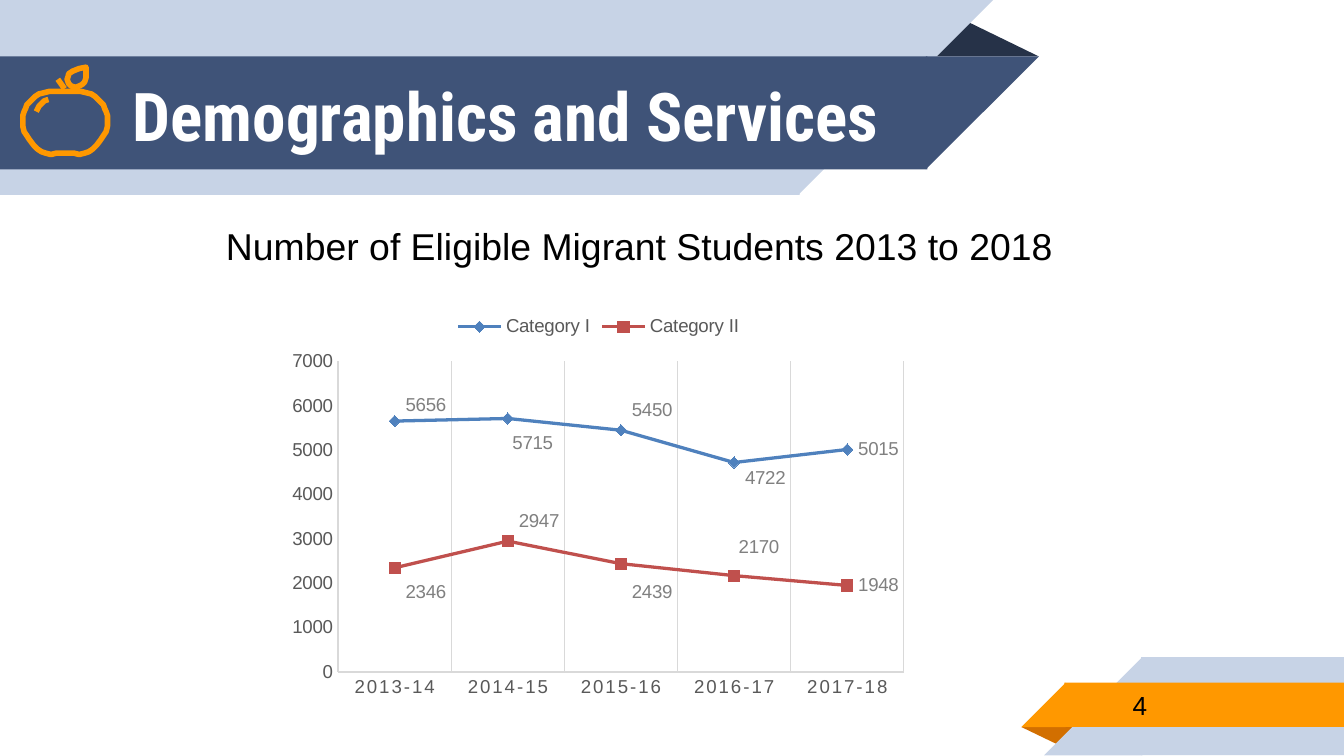
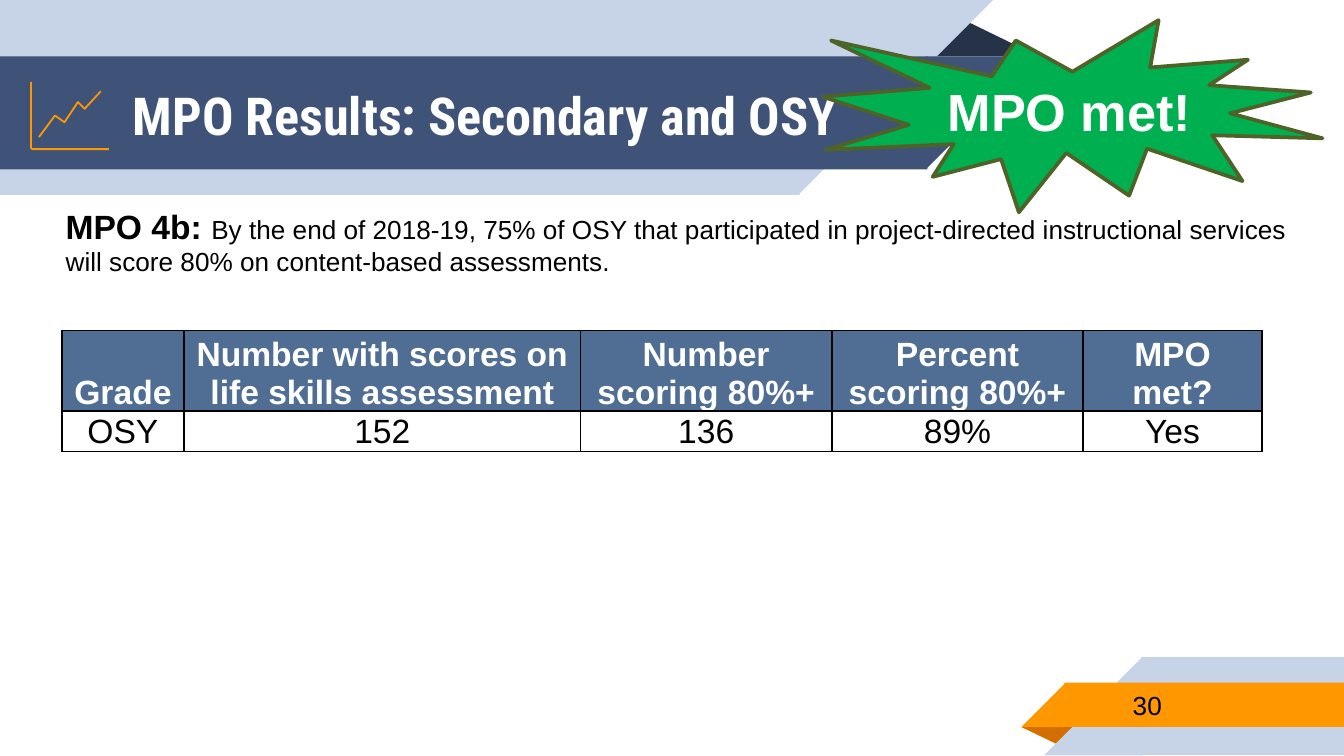
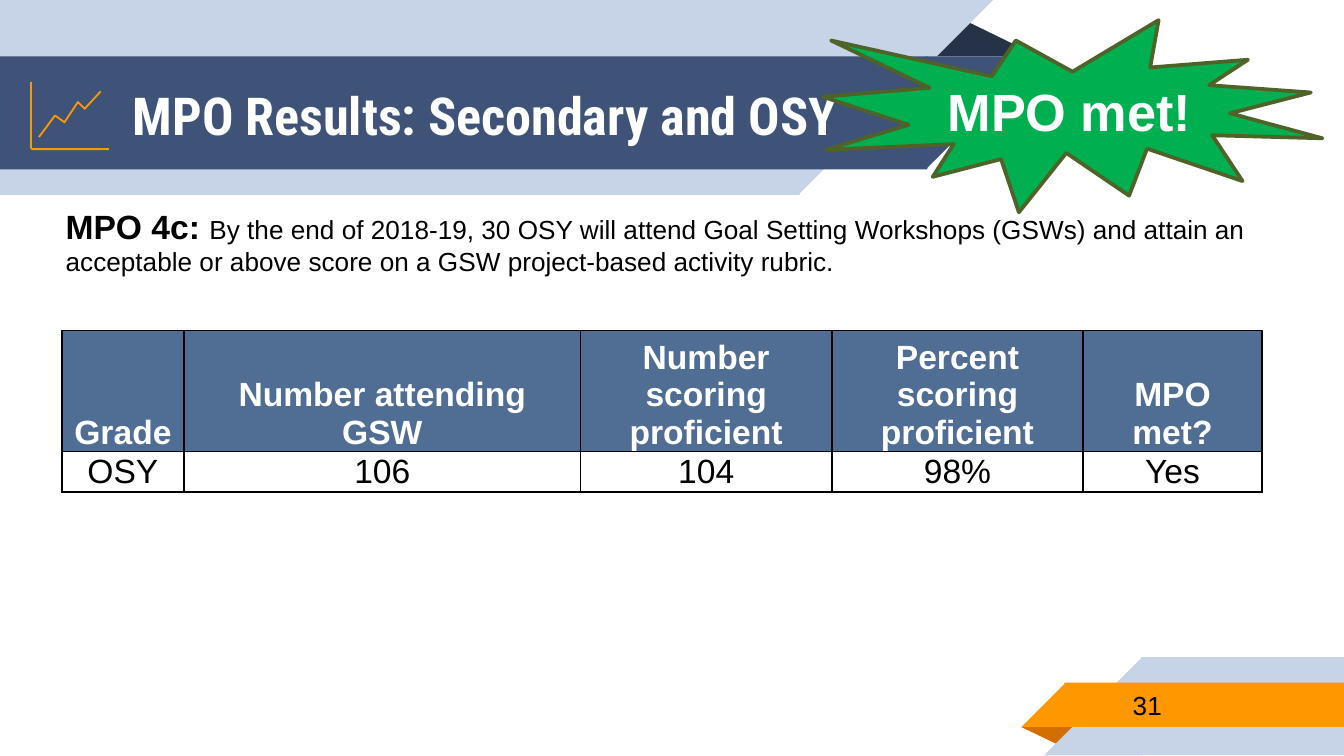
from pptx import Presentation
from pptx.chart.data import CategoryChartData
from pptx.dml.color import RGBColor
from pptx.enum.chart import (XL_CHART_TYPE as CT, XL_LABEL_POSITION as LP,
                             XL_LEGEND_POSITION as LEG, XL_MARKER_STYLE as MK,
                             XL_TICK_MARK as TM)
from pptx.enum.shapes import MSO_SHAPE as SH
from pptx.enum.text import MSO_ANCHOR as MA, PP_ALIGN as PA
from pptx.oxml import parse_xml
from pptx.oxml.ns import nsdecls
from pptx.util import Inches, Pt

NAVY, DARK, PALE = "3F5378", "263248", "C7D3E6"
ORANGE, RUST = "FF9800", "D26F00"
GREEN, OLIVE, STEEL = "00B050", "4F6228", "506E94"
BLACK, WHITE, GRID, GREY, LABEL = "000000", "FFFFFF", "D9D9D9", "595959", "808080"
BODY, HEAD = "Arial", "Roboto Condensed"
SEAM = 0.01

APPLE_HALF = [(31, 18), (24, 18), (20, 18), (16, 19), (12, 20), (9, 22), (7, 24), (5, 26),
              (3, 28), (2, 31), (1, 33), (0, 36), (0, 40), (0, 44), (1, 48), (3, 51),
              (5, 54), (8, 58), (11, 61), (14, 63), (17, 64), (21, 65), (25, 64), (31, 64)]
APPLE_BODY = APPLE_HALF + [(63 - x, y) for x, y in reversed(APPLE_HALF)]
APPLE_LEAF = [(34, 5), (37, 3), (42, 1), (47, 0), (47, 4), (47, 8), (46, 11), (44, 13),
              (42, 14), (39, 15), (36, 14), (34, 12), (33, 9), (34, 6)]
APPLE_SHINE = [(19, 24), (16, 25), (14, 27), (12, 29), (11, 31), (10, 33)]
APPLE_STEM = [(26, 9), (31, 16)]
GRAPH_AXES = [(0, 0), (0, 49), (1, 50), (58, 50)]
GRAPH_TREND = [(6, 41), (18, 25), (25, 30), (35, 15), (40, 20), (52, 7)]


def rgb(color):
    """Turn a hex string into a colour."""
    return RGBColor.from_string(color)


def style(font, size, color, bold=False, name=BODY):
    """Set the face, size, weight and colour of a font."""
    font.name, font.size, font.bold = name, Pt(size), bold
    font.color.rgb = rgb(color)


def add_run(p, text, size, color=BLACK, bold=False, name=BODY):
    """Append one styled run to a paragraph."""
    r = p.add_run()
    r.text = text
    style(r.font, size, color, bold, name)


def add_shape(s, kind, x, y, w, h, fill, flip=None):
    """Add a plain filled shape, mirrored if asked."""
    sp = s.shapes.add_shape(kind, Inches(x), Inches(y), Inches(w), Inches(h))
    sp.shadow.inherit = False
    sp.fill.solid()
    sp.fill.fore_color.rgb = rgb(fill)
    sp.line.fill.background()
    if flip:
        sp.element.spPr.xfrm.set(flip, "1")
    return sp


def add_text(s, x, y, w, h, anchor=MA.TOP, inset=0.05, align=PA.LEFT):
    """Add a wrapping text box and return its paragraph."""
    tf = s.shapes.add_textbox(Inches(x), Inches(y), Inches(w), Inches(h)).text_frame
    tf.word_wrap = True
    tf.vertical_anchor = anchor
    tf.margin_top = tf.margin_bottom = Inches(inset)
    p = tf.paragraphs[0]
    p.alignment = align
    return p


def add_fold(s, x, y, w, h, color):
    """Add the shaded fold behind a ribbon."""
    sp = add_shape(s, SH.ISOSCELES_TRIANGLE, x, y, w, h, color)
    sp.adjustments[0] = 0.324
    return sp


def header(s, title, size):
    """Draw the title ribbon across the top left."""
    add_fold(s, 6.88, 0.14, 0.85, 0.28, DARK)
    for y, w, h, color in [(0, 5.94, 1.45, PALE), (0.42, 6.89, 0.84, NAVY)]:
        add_shape(s, SH.RECTANGLE, 0, y, w + SEAM, h, color)
        add_shape(s, SH.RIGHT_TRIANGLE, w, y, h, h, color, "flipV")
    p = add_text(s, 0.89, 0.43, 6.51, 0.84, MA.MIDDLE, 0.1)
    add_run(p, title, size, WHITE, True, HEAD)


def footer(s, number):
    """Draw the page number ribbon at the bottom right."""
    add_fold(s, 7.6, 5.41, 0.43, 0.14, RUST).rotation = 180
    for x, y, h, color in [(8.5, 4.89, 0.73, PALE), (7.93, 5.08, 0.33, ORANGE)]:
        add_shape(s, SH.RECTANGLE, x - SEAM, y, 10 - x + SEAM, h, color)
        add_shape(s, SH.RIGHT_TRIANGLE, x - h, y, h, h, color, "flipH")
    p = add_text(s, 8.33, 5.07, 1.63, 0.35, MA.MIDDLE, 0.1)
    add_run(p, str(number), 14)


def icon(s, x, y, strokes, width):
    """Draw outline strokes, given in hundredths of an inch from a corner."""
    for points, closed in strokes:
        fb = s.shapes.build_freeform(*points[0], scale=Inches(0.01))
        fb.add_line_segments(points[1:], close=closed)
        sp = fb.convert_to_shape(Inches(x), Inches(y))
        sp.shadow.inherit = False
        sp.fill.background()
        sp.line.color.rgb = rgb(ORANGE)
        sp.line.width = Pt(width)


def new_slide(prs, title, size, number):
    """Add a blank slide with its ribbons."""
    s = prs.slides.add_slide(prs.slide_layouts[6])
    header(s, title, size)
    footer(s, number)
    return s


def manual_layout(x, y, size=""):
    """Build a chart layout element."""
    mode = '<c:layoutTarget val="inner"/><c:xMode val="edge"/><c:yMode val="edge"/>' if size else ""
    return parse_xml(f'<c:layout {nsdecls("c")}><c:manualLayout>{mode}<c:x val="{x}"/>'
                     f'<c:y val="{y}"/>{size}</c:manualLayout></c:layout>')


def hide_leader_lines(labels):
    """Switch off the lines between points and moved labels."""
    for node in labels.xpath("c:showLeaderLines"):
        node.set("val", "0")
    labels.append(parse_xml(
        f'<c:extLst {nsdecls("c")}><c:ext uri="{{CE6537A1-D6FC-4f65-9D91-7224C49458BB}}" '
        'xmlns:c15="http://schemas.microsoft.com/office/drawing/2012/chart">'
        '<c15:showLeaderLines val="0"/></c:ext></c:extLst>'))


def style_axis(axis):
    """Give an axis grey labels, a pale line and no ticks."""
    axis.major_tick_mark = axis.minor_tick_mark = TM.NONE
    style(axis.tick_labels.font, 10, GREY)
    axis.format.line.color.rgb = rgb(GRID)
    axis.format.line.width = Pt(0.75)


def style_series(ser, color, marker, shifts):
    """Colour a line and nudge the labels of its first points."""
    ser.smooth = False
    ser.format.line.color.rgb = rgb(color)
    ser.format.line.width = Pt(1.75)
    ser.marker.style, ser.marker.size = marker, 6
    ser.marker.format.fill.solid()
    ser.marker.format.fill.fore_color.rgb = rgb(color)
    ser.marker.format.line.color.rgb = rgb(color)
    labels = ser.data_labels
    labels.show_value = True
    labels.position = LP.RIGHT
    style(labels.font, 10, LABEL)
    for i in range(len(shifts)):
        label = ser.points[i].data_label
        style(label.font, 10, LABEL)
        label.position = LP.RIGHT
    for node, (dx, dy) in zip(labels._element.xpath("c:dLbl"), shifts):
        node.insert(1, manual_layout(dx, dy))
    hide_leader_lines(labels._element)


def student_chart(s, x, y, w, h):
    """Add the line chart of eligible students by year."""
    data = CategoryChartData()
    data.categories = ["2013-14", "2014-15", "2015-16", "2016-17", "2017-18"]
    data.add_series("Category I", [5656, 5715, 5450, 4722, 5015])
    data.add_series("Category II", [2346, 2947, 2439, 2170, 1948])
    chart = s.shapes.add_chart(CT.LINE_MARKERS, Inches(x), Inches(y),
                               Inches(w), Inches(h), data).chart
    style(chart.font, 10, BLACK)
    chart.has_title = False
    chart.has_legend = True
    chart.legend.position = LEG.TOP
    chart.legend.include_in_layout = False
    style(chart.legend.font, 10, GREY)
    cat, val = chart.category_axis, chart.value_axis
    style_axis(cat)
    style_axis(val)
    cat._element.xpath(".//a:defRPr")[0].set("spc", "120")
    cat.has_major_gridlines = True
    cat.major_gridlines.format.line.color.rgb = rgb(GRID)
    cat.major_gridlines.format.line.width = Pt(0.75)
    val.has_major_gridlines = False
    val.minimum_scale, val.maximum_scale, val.major_unit = 0, 7000, 1000
    plot = chart.plots[0]
    plot.vary_by_categories = False
    first, second = plot.series
    style_series(first, "4F81BD", MK.DIAMOND, [(0, -0.04), (-0.01, 0.06), (0, -0.05), (0, 0.04)])
    style_series(second, "C0504D", MK.SQUARE, [(0, 0.06), (0, -0.05), (0, 0.07), (-0.01, -0.07)])
    area = chart._chartSpace.xpath(".//c:plotArea")[0]
    for old in area.xpath("c:layout"):
        area.remove(old)
    area.insert(0, manual_layout(0.09, 0.15, '<c:w val="0.89"/><c:h val="0.77"/>'))


def add_borders(cell):
    """Rule all four sides of a cell."""
    tc_pr = cell._tc.get_or_add_tcPr()
    for side in ("lnL", "lnR", "lnT", "lnB"):
        tc_pr.append(parse_xml(f'<a:{side} {nsdecls("a")} w="12700"><a:solidFill>'
                               f'<a:srgbClr val="{BLACK}"/></a:solidFill></a:{side}>'))


def result_table(s, x, y, rows, head_height):
    """Add the results table with a steel heading row."""
    widths, heights = [0.91, 2.95, 1.87, 1.87, 1.33], [head_height, 0.3]
    table = s.shapes.add_table(len(rows), len(widths), Inches(x), Inches(y),
                               Inches(sum(widths)), Inches(sum(heights))).table
    table.horz_banding = False
    for col, w in zip(table.columns, widths):
        col.width = Inches(w)
    for i, texts in enumerate(rows):
        table.rows[i].height = Inches(heights[i])
        for j, text in enumerate(texts):
            cell = table.cell(i, j)
            add_borders(cell)
            cell.margin_left = cell.margin_right = Inches(0.08)
            cell.margin_top = cell.margin_bottom = 0
            p = cell.text_frame.paragraphs[0]
            p.alignment = PA.CENTER
            if i == 0:
                cell.vertical_anchor = MA.BOTTOM
                cell.fill.solid()
                cell.fill.fore_color.rgb = rgb(STEEL)
                add_run(p, text, 18, WHITE, True)
            else:
                cell.vertical_anchor = MA.MIDDLE
                cell.fill.background()
                add_run(p, text, 18)


def met_badge(s, x, y, w, h):
    """Add the green burst that reports success."""
    sp = add_shape(s, SH.EXPLOSION1, x, y, w, h, GREEN)
    sp.line.color.rgb = rgb(OLIVE)
    sp.line.width = Pt(2)
    tf = sp.text_frame
    tf.word_wrap = True
    tf.vertical_anchor = MA.MIDDLE
    p = tf.paragraphs[0]
    p.alignment = PA.CENTER
    add_run(p, "MPO met!", 28, WHITE, True)


def demographics_slide(prs):
    """Build the slide of student numbers."""
    s = new_slide(prs, "Demographics and Services", 36, 4)
    p = add_text(s, 1.44, 1.61, 6.64, 0.44, align=PA.CENTER)
    add_run(p, "Number of Eligible Migrant Students 2013 to 2018", 20)
    icon(s, 0.17, 0.5, [(APPLE_LEAF, True), (APPLE_BODY, True),
                        (APPLE_STEM, False), (APPLE_SHINE, False)], 3)
    student_chart(s, 2.09, 2.24, 4.73, 3)


def result_slide(prs, number, goal, statement, rows, head_height):
    """Build a slide for one measured goal."""
    s = new_slide(prs, "MPO Results: Secondary and OSY", 28, number)
    p = add_text(s, 0.39, 1.48, 9.38, 0.64)
    add_run(p, f"{goal}: ", 18, bold=True)
    add_run(p, statement, 14)
    icon(s, 0.23, 0.61, [(GRAPH_AXES, False), (GRAPH_TREND, False)], 0.96)
    result_table(s, 0.46, 2.46, rows, head_height)
    met_badge(s, 6.12, 0.15, 3.72, 1.43)


def main():
    """Build and save the three slides."""
    prs = Presentation()
    prs.slide_width, prs.slide_height = Inches(10), Inches(10) * 9 // 16
    demographics_slide(prs)
    result_slide(prs, 30, "MPO 4b",
                 "By the end of 2018-19, 75% of OSY that participated in project-directed "
                 "instructional services will score 80% on content-based assessments.",
                 [["Grade", "Number with scores on life skills assessment",
                   "Number scoring 80%+", "Percent scoring 80%+", "MPO met?"],
                  ["OSY", "152", "136", "89%", "Yes"]], 0.6)
    result_slide(prs, 31, "MPO 4c",
                 "By the end of 2018-19, 30 OSY will attend Goal Setting Workshops (GSWs) and "
                 "attain an acceptable or above score on a GSW project-based activity rubric.",
                 [["Grade", "Number attending GSW", "Number scoring proficient",
                   "Percent scoring proficient", "MPO met?"],
                  ["OSY", "106", "104", "98%", "Yes"]], 0.9)
    prs.save("out.pptx")


if __name__ == "__main__":
    main()
